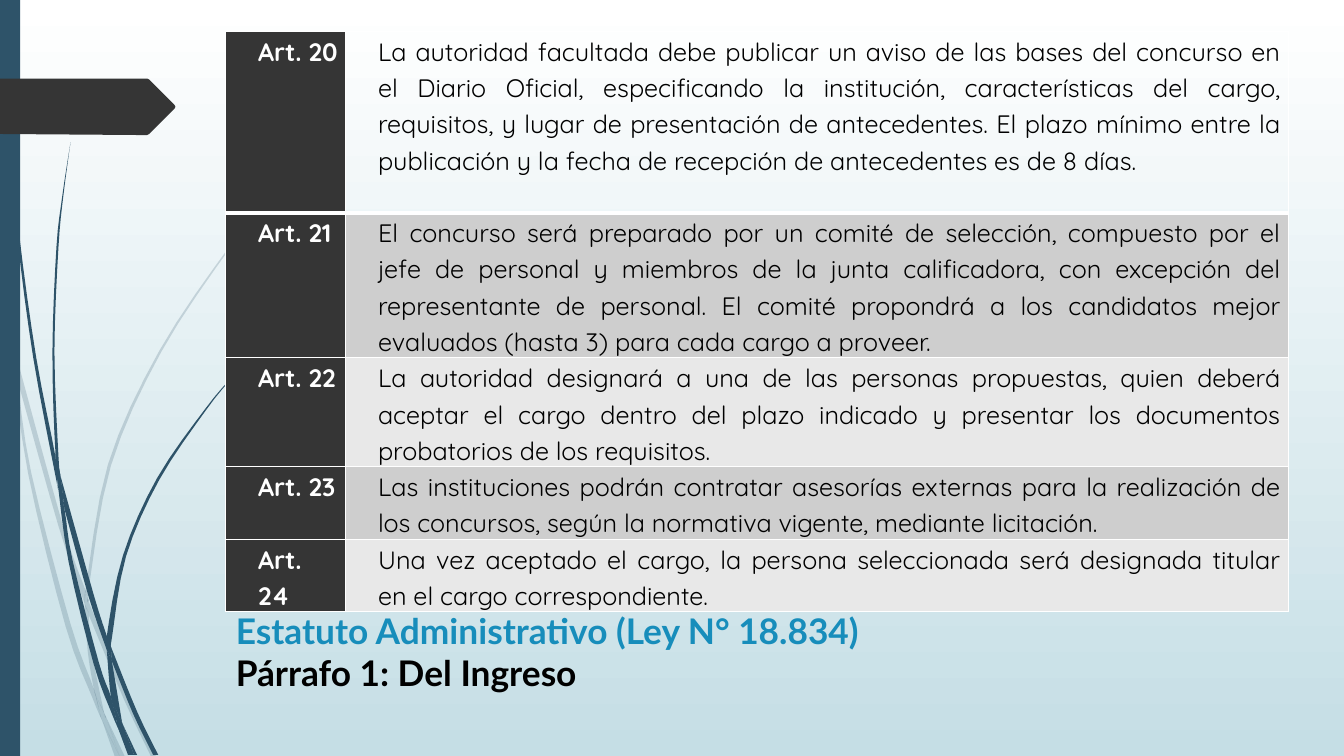
"""Build the slide on articles 20 to 24 of the Estatuto Administrativo."""
from lxml.etree import SubElement
from pptx import Presentation
from pptx.dml.color import RGBColor
from pptx.enum.shapes import MSO_SHAPE
from pptx.enum.text import MSO_ANCHOR, PP_ALIGN
from pptx.oxml import parse_xml
from pptx.oxml.ns import nsdecls, qn
from pptx.util import Pt

PX = 9144
COLORS = {
    "white": "FFFFFF", "sky": "C5DEE5", "navy": "2E5369", "dark": "353535",
    "blue": "178DBB", "black": "000000", "gray": "CECECE", "pale": "E8E8E8",
}
RGB = {name: RGBColor.from_string(value) for name, value in COLORS.items()}


def smooth(edge, steps=4):
    pts = [edge[0], *edge, edge[-1]]
    curve = []
    for a, b, c, d in zip(pts, pts[1:], pts[2:], pts[3:]):
        for i in range(steps):
            t = i / steps
            curve.append(tuple(
                q + t / 2 * (r - p + t * (2 * p - 5 * q + 4 * r - s + t * (3 * q - p - 3 * r + s)))
                for p, q, r, s in zip(a, b, c, d)))
    return curve + [edge[-1]]


def add_outline(points, color):
    pts = [(round(x * PX), round(y * PX)) for x, y in points]
    builder = slide.shapes.build_freeform(*pts[0])
    builder.add_line_segments(pts[1:], close=True)
    sp = builder.convert_to_shape()
    sp.shadow.inherit = False
    sp.fill.solid()
    sp.fill.fore_color.rgb = RGB[color]
    sp.line.fill.background()
    return sp


prs = Presentation()
prs.slide_width, prs.slide_height = 1333 * PX, 750 * PX
slide = prs.slides.add_slide(prs.slide_layouts[6])

bg = slide.background.fill
bg.gradient()
bg.gradient_angle = 270
for stop, name in zip(bg.gradient_stops, ("white", "sky")):
    stop.color.rgb = RGB[name]

light_blades = [
    ([(0, 282), (9, 322), (11, 350)], [(0, 299), (10, 344), (11, 350)]),
    ([(14, 345), (62, 520), (85, 586)], [(17, 376), (58, 522), (84, 599)]),
    ([(88, 596), (92, 607), (127, 692), (155, 751)], [(88, 610), (123, 694), (150, 751)]),
    ([(105, 711), (124, 751)], [(105, 711), (119, 751)]),
    ([(11, 350), (17, 376), (31, 469), (70, 619), (93, 683), (99, 707), (101, 714)],
     [(11, 350), (28, 470), (65, 621), (92, 693), (101, 714)]),
    ([(88, 608), (88, 610), (91, 646), (103, 706), (105, 711)],
     [(84, 599), (87, 646), (93, 683), (96, 692), (105, 711)]),
    ([(312, 153), (290, 175), (268, 198), (229, 245), (160, 349), (110, 462), (88, 584), (88, 596)],
     [(312, 153), (289, 175), (268, 197), (228, 244), (158, 348), (107, 461), (85, 584), (85, 586)]),
    ([(101, 714), (119, 751)], [(101, 714), (114, 751)]),
    ([(88, 596), (88, 610)], [(85, 586), (84, 599), (88, 608)]),
    ([(93, 683), (96, 692), (105, 711), (119, 751)],
     [(93, 683), (99, 707), (101, 714), (119, 751)]),
]
dark_blades = [
    ([(4, 0), (4, 48), (8, 109), (19, 232), (36, 355), (55, 453), (57, 481)],
     [(3, 0), (4, 48), (7, 110), (17, 233), (33, 355), (56, 477), (57, 481)]),
    ([(60, 472), (93, 590), (106, 631)], [(64, 505), (88, 592), (106, 645)]),
    ([(110, 641), (113, 649), (136, 706), (157, 749)], [(111, 656), (132, 708), (152, 749)]),
    ([(57, 477), (64, 505), (72, 556), (98, 657), (110, 691), (116, 717), (117, 722)],
     [(57, 477), (68, 557), (93, 659), (111, 708), (117, 722)]),
    ([(70, 141), (63, 193), (58, 245), (54, 349), (58, 453), (60, 472)],
     [(70, 141), (62, 193), (56, 245), (52, 349), (55, 449), (60, 472)]),
    ([(122, 719), (136, 749)], [(122, 719), (133, 749)]),
    ([(55, 449), (60, 472), (64, 505)], [(55, 453), (57, 477), (64, 505)]),
    ([(261, 344), (245, 359), (231, 374), (205, 406), (158, 476), (125, 552), (111, 633), (110, 641)],
     [(260, 344), (245, 358), (231, 373), (204, 405), (156, 474), (122, 551), (106, 631), (110, 641)]),
    ([(117, 722), (131, 749)], [(117, 722), (127, 749)]),
    ([(106, 645), (109, 651), (111, 656), (121, 716), (122, 719)],
     [(106, 645), (110, 691), (116, 706), (122, 719)]),
    ([(106, 631), (110, 641), (111, 656)], [(106, 645), (109, 651), (111, 656)]),
    ([(110, 691), (116, 706), (122, 719), (133, 749)],
     [(110, 691), (116, 717), (117, 722), (130, 749)]),
]
for blades, opacity in ((light_blades, 20), (dark_blades, 100)):
    for right, left in blades:
        sp = add_outline(smooth(right) + smooth(left)[::-1], "navy")
        if opacity < 100:
            rgb = sp.fill._xPr.find(qn("a:solidFill"))[0]
            SubElement(rgb, qn("a:alpha"), val=str(opacity * 1000))

bar = slide.shapes.add_shape(MSO_SHAPE.RECTANGLE, 0, 0, 20 * PX, 750 * PX)
bar.shadow.inherit = False
bar.fill.solid()
bar.fill.fore_color.rgb = RGB["navy"]
bar.line.fill.background()

add_outline([(0, 78), (146, 78), (148, 79), (173, 104), (174, 106), (173, 108), (148, 133),
             (146, 134), (136, 134), (0, 133)], "dark")

title = slide.shapes.add_textbox(224 * PX, 625 * PX, 1021 * PX, 110 * PX)
tf = title.text_frame
tf.word_wrap = True
tf.vertical_anchor = MSO_ANCHOR.BOTTOM
tf.margin_bottom = 47 * PX
tf.text = "Estatuto Administrativo (Ley N° 18.834)\nPárrafo 1: Del Ingreso"
for p, color in zip(tf.paragraphs, ("blue", "black")):
    p.font.name, p.font.size, p.font.bold = "Lato", Pt(25.2), True
    p.font.color.rgb = RGB[color]

articles = [
    ("Art. 20", "La autoridad facultada debe publicar un aviso de las bases del concurso en el "
     "Diario Oficial, especificando la institución, características del cargo, requisitos, y "
     "lugar de presentación de antecedentes. El plazo mínimo entre la publicación y la fecha "
     "de recepción de antecedentes es de 8 días.", 180, None),
    ("Art. 21", "El concurso será preparado por un comité de selección, compuesto por el jefe "
     "de personal y miembros de la junta calificadora, con excepción del representante de "
     "personal. El comité propondrá a los candidatos mejor evaluados (hasta 3) para cada "
     "cargo a proveer.", 144, "gray"),
    ("Art. 22", "La autoridad designará a una de las personas propuestas, quien deberá aceptar "
     "el cargo dentro del plazo indicado y presentar los documentos probatorios de los "
     "requisitos.", 108, "pale"),
    ("Art. 23", "Las instituciones podrán contratar asesorías externas para la realización de "
     "los concursos, según la normativa vigente, mediante licitación.", 72, "gray"),
    ("Art. 24", "Una vez aceptado el cargo, la persona seleccionada será designada titular en "
     "el cargo correspondiente.", 72, "pale"),
]
table = slide.shapes.add_table(5, 2, 224 * PX, 31 * PX, 1054 * PX, 576 * PX).table
table.first_row = table.horz_banding = False
for column, width in zip(table.columns, (119, 935)):
    column.width = width * PX

for i, (article, summary, height, band) in enumerate(articles):
    table.rows[i].height = height * PX
    for j, (text, color, fill) in enumerate(((article, "white", "dark"), (summary, "black", band))):
        cell = table.cell(i, j)
        cell.margin_left, cell.margin_right = 7 * PX, (7 + j) * PX
        cell.margin_top = cell.margin_bottom = 0
        if fill:
            cell.fill.solid()
            cell.fill.fore_color.rgb = RGB[fill]
        else:
            cell.fill.background()
        p = cell.text_frame.paragraphs[0]
        p.text = text
        p.alignment = PP_ALIGN.JUSTIFY
        p.line_spacing, p.space_after = 1.15, Pt(8)
        p._p.get_or_add_pPr().set("marL", str(25 * PX))
        p.font.name, p.font.size, p.font.bold = "Quicksand", Pt(18), j == 0
        p.font.color.rgb = RGB[color]
        tc_pr = cell._tc.get_or_add_tcPr()
        for k, side in enumerate("LRTB"):
            thick = (i, side) in ((0, "B"), (1, "T"))
            tc_pr.insert(k, parse_xml(
                f'<a:ln{side} {nsdecls("a")} w="{Pt(3 if thick else 1)}"><a:solidFill>'
                f'<a:srgbClr val="{COLORS["white"]}"/></a:solidFill></a:ln{side}>'))

prs.save("out.pptx")
